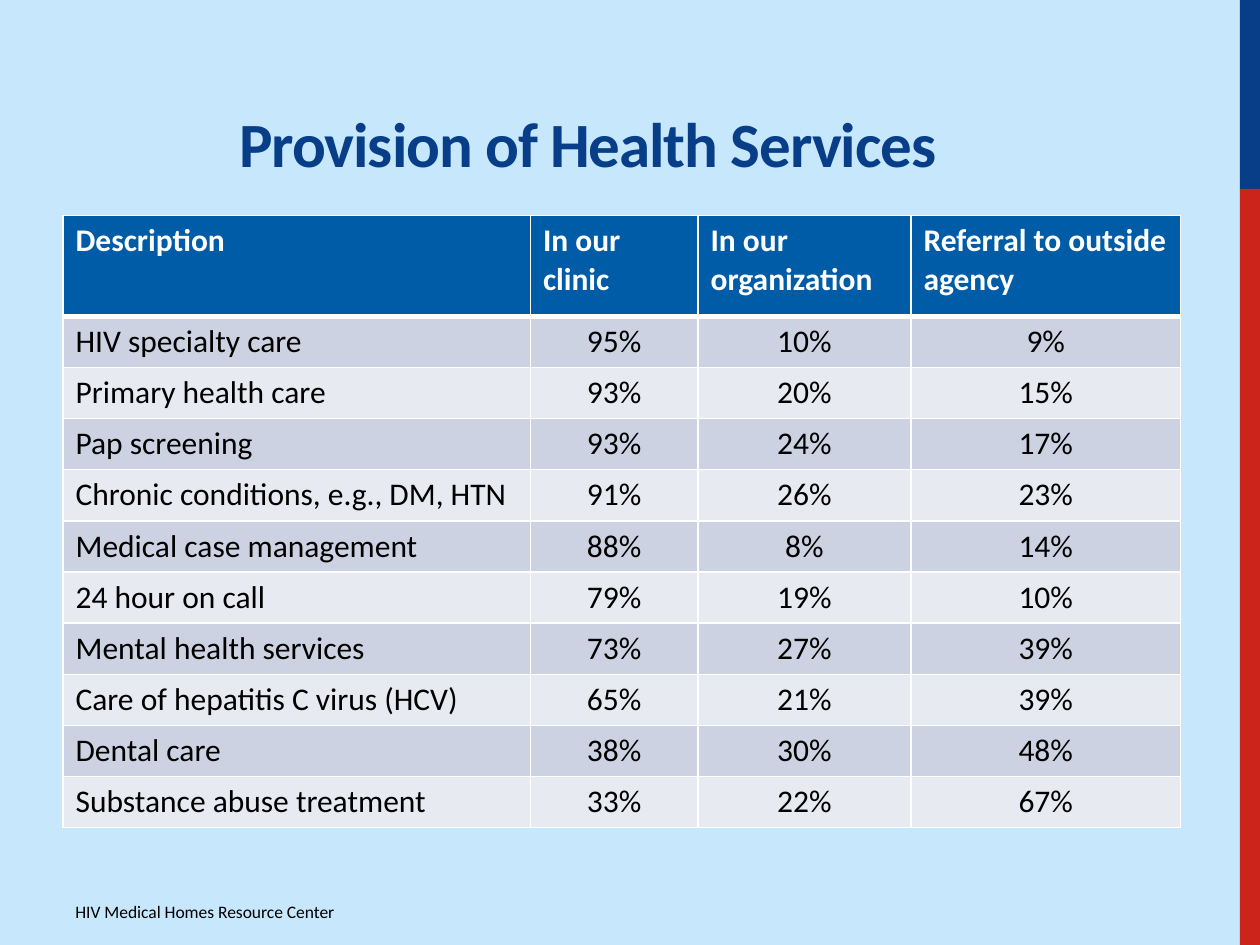
from lxml.etree import SubElement
from pptx import Presentation
from pptx.dml.color import RGBColor
from pptx.enum.shapes import MSO_SHAPE
from pptx.enum.text import MSO_ANCHOR, PP_ALIGN
from pptx.oxml.ns import qn
from pptx.util import Inches, Pt

SKY = RGBColor(0xC6, 0xE7, 0xFC)
NAVY = RGBColor(0x07, 0x3E, 0x87)
RED = RGBColor(0xCC, 0x24, 0x1B)
BLUE = RGBColor(0x00, 0x5C, 0xA7)
BAND_DARK = RGBColor(0xCC, 0xD2, 0xE1)
BAND_LIGHT = RGBColor(0xE7, 0xEA, 0xF1)
WHITE = RGBColor(0xFF, 0xFF, 0xFF)
BLACK = RGBColor(0, 0, 0)

TITLE = "Provision of Health Services"
FOOTER = "HIV Medical Homes Resource Center"
HEADER = ("Description", "In our clinic", "In our organization",
          "Referral to outside agency")
SERVICES = [
    ("HIV specialty care", 95, 10, 9),
    ("Primary health care", 93, 20, 15),
    ("Pap screening", 93, 24, 17),
    ("Chronic conditions, e.g., DM, HTN", 91, 26, 23),
    ("Medical case management", 88, 8, 14),
    ("24 hour on call", 79, 19, 10),
    ("Mental health services", 73, 27, 39),
    ("Care of hepatitis C virus (HCV)", 65, 21, 39),
    ("Dental care", 38, 30, 48),
    ("Substance abuse treatment", 33, 22, 67),
]

PANELS = [
    ((0, 0, 9.84, 7.5), SKY),
    ((9.84, 0, 0.16, 1.5), NAVY),
    ((9.84, 1.5, 0.16, 6), RED),
]
TITLE_BOX = (0.5, 0.37, 8.33, 1.11)
FOOTER_BOX = (0.5, 7.1, 3.75, 0.31)
TABLE_BOX = (0.5, 1.71, 8.87, 4.86)
COLUMN_WIDTHS = (3.71, 1.33, 1.69, 2.14)
HEADER_HEIGHT = 0.8


def inches(box):
    return [Inches(length) for length in box]


def style(font, size, color, bold=False):
    font.color.rgb = color
    formats = {"name": "Calibri", "size": Pt(size), "bold": bold}
    for attribute, setting in formats.items():
        setattr(font, attribute, setting)


def add_borders(cell, top, bottom):
    """Draw white cell borders; top and bottom are widths in points."""
    properties = cell._tc.get_or_add_tcPr()
    for side, width in (("L", 1), ("R", 1), ("T", top), ("B", bottom)):
        line = SubElement(properties, qn(f"a:ln{side}"), w=str(int(Pt(width))))
        fill = SubElement(line, qn("a:solidFill"))
        SubElement(fill, qn("a:srgbClr"), val=str(WHITE))


def add_panels(slide):
    for box, color in PANELS:
        panel = slide.shapes.add_shape(MSO_SHAPE.RECTANGLE, *inches(box))
        panel.shadow.inherit = False
        panel.fill.solid()
        panel.fill.fore_color.rgb = color
        panel.line.fill.background()
        # Panels lie behind the title placeholder
        slide.shapes.title._element.addprevious(panel._element)


def add_title(slide):
    title = slide.shapes.title
    title.left, title.top, title.width, title.height = inches(TITLE_BOX)
    title.text_frame.text = TITLE
    title.text_frame.vertical_anchor = MSO_ANCHOR.BOTTOM
    paragraph = title.text_frame.paragraphs[0]
    paragraph.alignment = PP_ALIGN.CENTER
    run = paragraph.runs[0]
    style(run.font, 36, NAVY, bold=True)
    run._r.get_or_add_rPr().set("spc", "-60")


def add_footer(slide):
    frame = slide.shapes.add_textbox(*inches(FOOTER_BOX)).text_frame
    frame.word_wrap = True
    frame.text = FOOTER
    style(frame.paragraphs[0].runs[0].font, 10, BLACK)


def add_services_table(slide):
    rows = [HEADER] + [(name, *(f"{share}%" for share in shares))
                       for name, *shares in SERVICES]
    table = slide.shapes.add_table(
        len(rows), len(HEADER), *inches(TABLE_BOX)).table
    for column, width in zip(table.columns, COLUMN_WIDTHS):
        column.width = Inches(width)
    body_height = (TABLE_BOX[3] - HEADER_HEIGHT) / len(SERVICES)

    for r, texts in enumerate(rows):
        is_header = r == 0
        table.rows[r].height = Inches(HEADER_HEIGHT if is_header else body_height)
        band = BLUE if is_header else (BAND_LIGHT, BAND_DARK)[r % 2]
        for c, text in enumerate(texts):
            cell = table.cell(r, c)
            add_borders(cell, top=3 if r == 1 else 1, bottom=3 if is_header else 1)
            cell.fill.solid()
            cell.fill.fore_color.rgb = band
            cell.text = text
            paragraph = cell.text_frame.paragraphs[0]
            if not is_header and c > 0:
                paragraph.alignment = PP_ALIGN.CENTER
            style(paragraph.runs[0].font, 18,
                  WHITE if is_header else BLACK, bold=is_header)


def main():
    deck = Presentation()
    deck.slide_width, deck.slide_height = inches((10, 7.5))
    slide = deck.slides.add_slide(deck.slide_layouts[5])
    add_panels(slide)
    add_title(slide)
    add_footer(slide)
    add_services_table(slide)
    deck.save("out.pptx")


if __name__ == "__main__":
    main()
